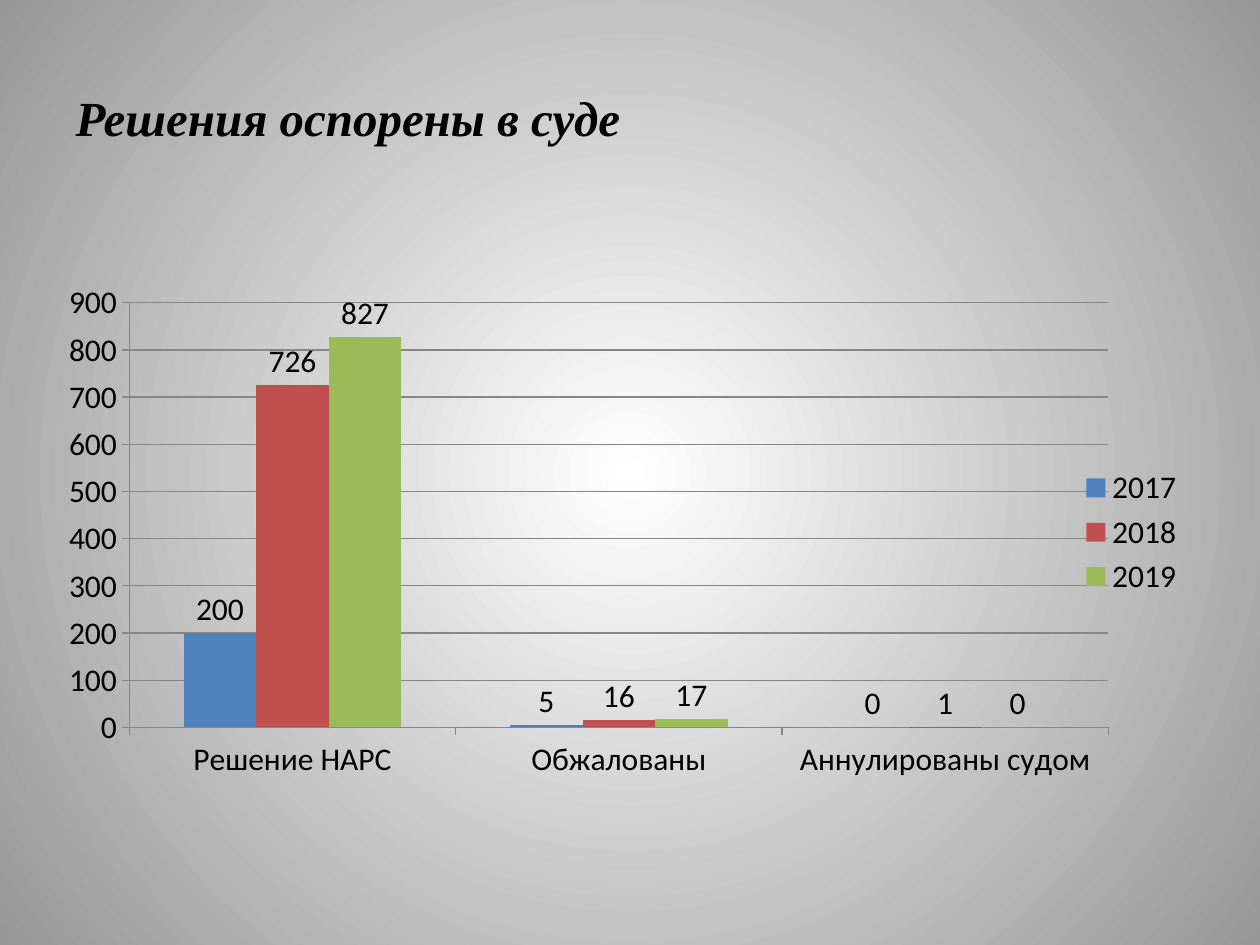
from dataclasses import dataclass

from lxml.etree import SubElement
from pptx import Presentation
from pptx.chart.data import CategoryChartData
from pptx.dml.color import RGBColor
from pptx.enum.chart import (XL_CHART_TYPE, XL_LABEL_POSITION, XL_LEGEND_POSITION,
                             XL_TICK_LABEL_POSITION, XL_TICK_MARK)
from pptx.enum.text import MSO_ANCHOR, PP_ALIGN
from pptx.oxml import parse_xml
from pptx.oxml.ns import nsdecls, qn
from pptx.util import Inches, Pt


@dataclass(frozen=True)
class Theme:
    """Colours, fonts and type sizes of the slide."""
    text: str = "000000"
    axis: str = "868686"
    glow: tuple = ("FFFFFF", "979797")
    series: tuple = ("4F81BD", "C0504D", "9BBB59")
    title_font: str = "Times New Roman"
    chart_font: str = "Calibri"
    title_size: int = 28
    chart_size: int = 18


THEME = Theme()
WIDTH, HEIGHT = Inches(10), Inches(7.5)
TITLE_BOX = (0.05, 0.04, 0.9, 0.1667)
CHART_BOX = (0.025, 0.2333, 0.925, 0.66)
PLOT_SHARES = {"x": 0.084, "y": 0.132, "w": 0.84, "h": 0.681}
CATEGORIES = ("Решение НАРС", "Обжалованы", "Аннулированы судом")
DECISIONS = {"2017": (200, 5, 0), "2018": (726, 16, 1), "2019": (827, 17, 0)}


def place(box):
    """Turn shares of the slide into left, top, width and height."""
    left, top, width, height = box
    return (round(left * WIDTH), round(top * HEIGHT),
            round(width * WIDTH), round(height * HEIGHT))


def format_font(font, *, name, size, color=THEME.text, bold=False, italic=False):
    """Apply typeface, size, colour and style to a font."""
    font.name, font.size = name, Pt(size)
    font.bold, font.italic = bold, italic
    font.color.rgb = RGBColor.from_string(color)


def write_text(shape, text, *, align=PP_ALIGN.LEFT, anchor=MSO_ANCHOR.MIDDLE, **style):
    """Write one formatted paragraph into a shape."""
    frame = shape.text_frame
    frame.word_wrap = True
    frame.vertical_anchor = anchor
    paragraph = frame.paragraphs[0]
    paragraph.alignment = align
    run = paragraph.add_run()
    run.text = text
    format_font(run.font, **style)


def paint_background(slide):
    """Fill the background with a gradient that spreads from the centre."""
    fill = slide.background.fill
    fill.gradient()
    for stop, color in zip(fill.gradient_stops, THEME.glow):
        stop.color.rgb = RGBColor.from_string(color)
    linear = next(slide.element.iter(qn("a:lin")))
    linear.getparent().replace(linear, parse_xml(
        f'<a:path {nsdecls("a")} path="circle">'
        '<a:fillToRect l="50000" t="50000" r="50000" b="50000"/></a:path>'))


def add_title(slide, box, text):
    """Move the title placeholder into its box and write it."""
    title = slide.shapes.title
    title.left, title.top, title.width, title.height = place(box)
    write_text(title, text, name=THEME.title_font, size=THEME.title_size,
               bold=True, italic=True)


def set_plot_layout(chart, shares):
    """Fix the inner plot area to shares of the chart."""
    plot_area = next(chart.element.iter(qn("c:plotArea")))
    for layout in plot_area.findall(qn("c:layout")):
        plot_area.remove(layout)
    layout = parse_xml(f'<c:layout {nsdecls("c")}><c:manualLayout/></c:layout>')
    settings = {"layoutTarget": "inner", "xMode": "edge", "yMode": "edge", **shares}
    for tag, value in settings.items():
        SubElement(layout[0], qn(f"c:{tag}")).set("val", str(value))
    plot_area.insert(0, layout)


def format_axes(chart):
    """Style both axes and the value gridlines."""
    values = chart.value_axis
    values.minimum_scale, values.maximum_scale, values.major_unit = 0, 900, 100
    values.has_major_gridlines = True
    chart.category_axis.tick_label_position = XL_TICK_LABEL_POSITION.LOW
    for axis in (chart.category_axis, values):
        axis.major_tick_mark = XL_TICK_MARK.OUTSIDE
        axis.minor_tick_mark = XL_TICK_MARK.NONE
    for line in (chart.category_axis.format.line, values.format.line,
                 values.major_gridlines.format.line):
        line.color.rgb = RGBColor.from_string(THEME.axis)
        line.width = Pt(0.75)


def format_series(plot):
    """Colour the columns and label them with their values."""
    plot.gap_width, plot.overlap, plot.vary_by_categories = 150, 0, False
    for series, color in zip(plot.series, THEME.series):
        series.format.fill.solid()
        series.format.fill.fore_color.rgb = RGBColor.from_string(color)
        series.invert_if_negative = False
        labels = series.data_labels
        labels.show_value = True
        labels.position = XL_LABEL_POSITION.OUTSIDE_END


def add_decisions_chart(slide, box):
    """Place the clustered columns of decisions by year."""
    data = CategoryChartData(number_format="General")
    data.categories = CATEGORIES
    for year, values in DECISIONS.items():
        data.add_series(year, values)
    chart = slide.shapes.add_chart(
        XL_CHART_TYPE.COLUMN_CLUSTERED, *place(box), data).chart
    format_font(chart.font, name=THEME.chart_font, size=THEME.chart_size)
    chart.has_title = False
    chart.has_legend = True
    chart.legend.position = XL_LEGEND_POSITION.RIGHT
    chart.legend.include_in_layout = False
    set_plot_layout(chart, PLOT_SHARES)
    format_axes(chart)
    format_series(chart.plots[0])


def main():
    """Build and save the presentation."""
    presentation = Presentation()
    presentation.slide_width, presentation.slide_height = WIDTH, HEIGHT
    slide = presentation.slides.add_slide(
        presentation.slide_layouts.get_by_name("Title Only"))
    paint_background(slide)
    add_title(slide, TITLE_BOX, "Решения оспорены в суде")
    add_decisions_chart(slide, CHART_BOX)
    presentation.save("out.pptx")


if __name__ == "__main__":
    main()
